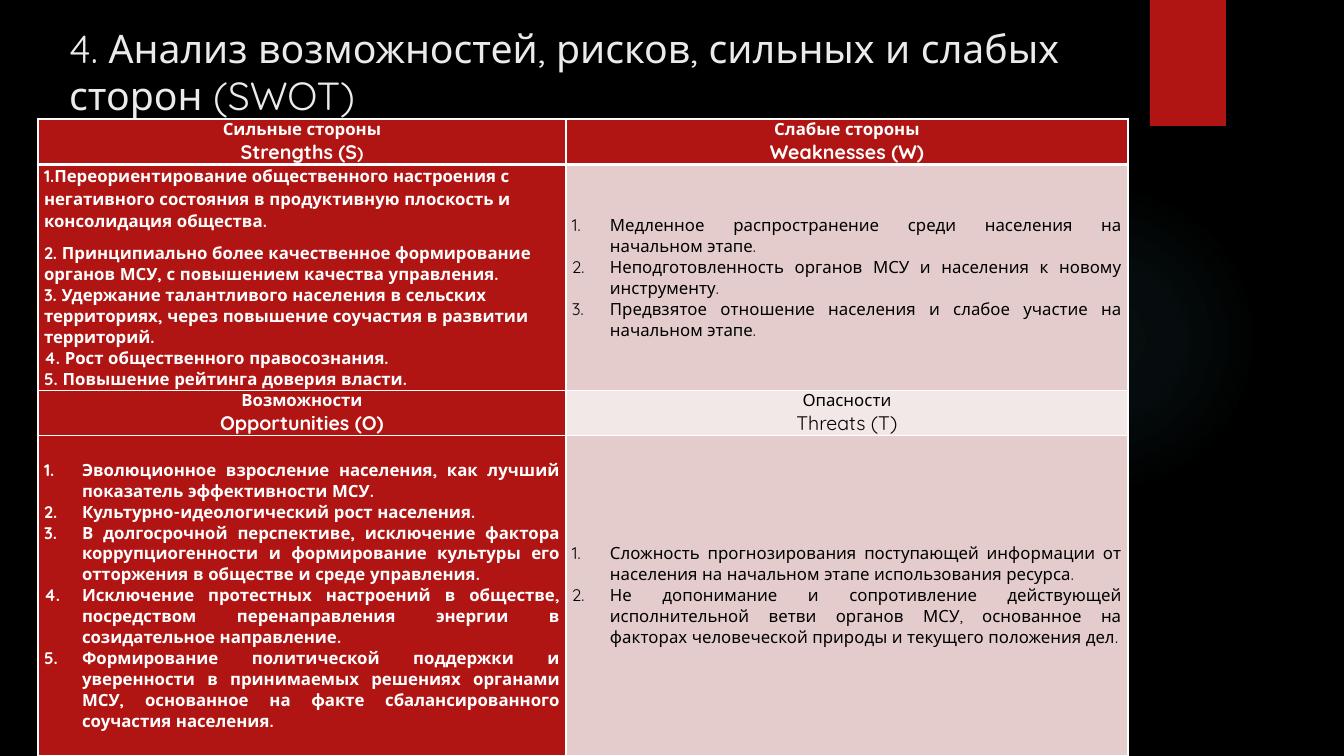
from lxml.etree import SubElement
from pptx import Presentation
from pptx.dml.color import RGBColor
from pptx.enum.shapes import MSO_SHAPE as Shape
from pptx.enum.text import MSO_ANCHOR as Anchor, MSO_AUTO_SIZE as AutoSize, PP_ALIGN as Align
from pptx.oxml import parse_xml
from pptx.oxml.ns import nsdecls, qn
from pptx.util import Emu, Pt

FONT = "Quicksand"
RED, PINK, PALE, WHITE, BLACK = "B01513", "E4CCCC", "F2E8E7", "FFFFFF", "000000"
TITLE = "4. Анализ возможностей, рисков, сильных и слабых сторон (SWOT)"
COLUMNS = [528, 562]
ROWS = [34, 205, 34, 320]

HEADINGS = {
    (0, 0): ("Сильные стороны", [("Strengths (S", 14), (")", 12)]),
    (0, 1): ("Слабые стороны", [("Weaknesses (W)", 14)]),
    (2, 0): ("Возможности", [("Opportunities (O)", 14)]),
    (2, 1): ("Опасности", [("Threats (T)", 14)]),
}
STRENGTHS = [
    "1.Переориентирование общественного настроения с негативного состояния в продуктивную плоскость и консолидация общества.",
    "2. Принципиально более качественное формирование органов МСУ, с повышением качества управления.",
    "3. Удержание талантливого населения в сельских территориях, через повышение соучастия в развитии территорий.",
    "4. Рост общественного правосознания.",
    "5. Повышение рейтинга доверия власти.",
]
NUMBERED = {
    (1, 1): [
        "Медленное распространение среди населения на начальном этапе.",
        "Неподготовленность органов МСУ и населения к новому инструменту.",
        "Предвзятое отношение населения и слабое участие на начальном этапе.",
    ],
    (3, 0): [
        "Эволюционное взросление населения, как лучший показатель эффективности МСУ.",
        "Культурно-идеологический рост населения.",
        "В долгосрочной перспективе, исключение фактора коррупциогенности и формирование культуры его отторжения в обществе и среде управления.",
        "Исключение протестных настроений в обществе, посредством перенаправления энергии в созидательное направление.",
        "Формирование политической поддержки и уверенности в принимаемых решениях органами МСУ, основанное на факте сбалансированного соучастия населения.",
    ],
    (3, 1): [
        "Сложность прогнозирования поступающей информации от населения на начальном этапе использования ресурса.",
        "Не допонимание и сопротивление действующей исполнительной ветви органов МСУ, основанное на факторах человеческой природы и текущего положения дел.",
    ],
}


def px(length):
    return Emu(round(length * 914400 / 100.8))


def color(value):
    return RGBColor.from_string(value)


def add_run(paragraph, text, size, ink, bold=False):
    run = paragraph.add_run()
    run.text = text
    run.font.name = FONT
    run.font.size = Pt(size)
    run.font.bold = bold
    run.font.color.rgb = color(ink)


def add_paragraph(frame, index, align):
    paragraph = frame.add_paragraph() if index else frame.paragraphs[0]
    paragraph.alignment = align
    return paragraph


def add_decoration(slide, kind, *box):
    shape = slide.shapes.add_shape(kind, *map(px, box))
    shape.shadow.inherit = False
    shape.line.fill.background()
    return shape


def add_glow(slide):
    glow = add_decoration(slide, Shape.OVAL, 949, 184, 310, 310)
    glow.fill.background()
    stops = "".join(
        f'<a:gs pos="{place * 1000}"><a:srgbClr val="50B9C1"><a:alpha val="{alpha * 1000}"/></a:srgbClr></a:gs>'
        for place, alpha in [(0, 7), (36, 6), (69, 0)]
    )
    gradient = parse_xml(
        f'<a:gradFill {nsdecls("a")} rotWithShape="1"><a:gsLst>{stops}</a:gsLst><a:path path="circle">'
        '<a:fillToRect l="50000" t="50000" r="50000" b="50000"/></a:path></a:gradFill>'
    )
    properties = glow.element.spPr
    properties.replace(properties.find(qn("a:noFill")), gradient)


def set_borders(cell, row):
    thick = {0: "B", 1: "T"}.get(row)
    for side in "LRTB":
        width = Pt(3 if side == thick else 1)
        line = SubElement(cell._tc.get_or_add_tcPr(), qn(f"a:ln{side}"), w=str(width))
        SubElement(SubElement(line, qn("a:solidFill")), qn("a:srgbClr"), val=WHITE)


def number(paragraph):
    properties = paragraph._p.get_or_add_pPr()
    properties.set("marL", str(px(38)))
    properties.set("indent", str(px(-38)))
    SubElement(properties, qn("a:buFont"), typeface="+mj-lt")
    SubElement(properties, qn("a:buAutoNum"), type="arabicPeriod")


def fill_cell(cell, row, column):
    red = row == 0 or column == 0
    heading = (row, column) in HEADINGS
    ink = WHITE if red else BLACK
    cell.margin_left = cell.margin_right = px(6)
    cell.margin_top = cell.margin_bottom = 0
    cell.vertical_anchor = Anchor.TOP if heading else Anchor.MIDDLE
    set_borders(cell, row)
    cell.fill.solid()
    cell.fill.fore_color.rgb = color(RED if red else PALE if heading else PINK)
    frame = cell.text_frame
    if heading:
        russian, english = HEADINGS[row, column]
        for index, runs in enumerate([[(russian, 12)], english]):
            paragraph = add_paragraph(frame, index, Align.CENTER)
            for text, size in runs:
                add_run(paragraph, text, size, ink, red)
        return
    numbered = (row, column) in NUMBERED
    for index, text in enumerate(NUMBERED.get((row, column), STRENGTHS)):
        paragraph = add_paragraph(frame, index, Align.JUSTIFY if numbered else Align.LEFT)
        if numbered:
            number(paragraph)
        elif index == 0:
            paragraph.line_spacing = 1.07
            paragraph.space_after = Pt(8)
        add_run(paragraph, text, 12, ink, red)


def add_swot_table(slide):
    table = slide.shapes.add_table(
        len(ROWS), len(COLUMNS), px(38), px(119), px(sum(COLUMNS)), px(sum(ROWS))
    ).table
    for column, width in enumerate(COLUMNS):
        table.columns[column].width = px(width)
    for row, height in enumerate(ROWS):
        table.rows[row].height = px(height)
        for column in range(len(COLUMNS)):
            fill_cell(table.cell(row, column), row, column)


def add_title(slide):
    title = slide.shapes.title
    title.left, title.top, title.width, title.height = map(px, (59, 19, 1037, 72))
    frame = title.text_frame
    frame.word_wrap = True
    frame.auto_size = AutoSize.NONE
    frame.vertical_anchor = Anchor.TOP
    add_run(add_paragraph(frame, 0, Align.LEFT), TITLE, 28, "EBEBEB")


def main():
    presentation = Presentation()
    presentation.slide_width, presentation.slide_height = px(1344), px(756)
    slide = presentation.slides.add_slide(presentation.slide_layouts[5])
    slide.background.fill.solid()
    slide.background.fill.fore_color.rgb = color(BLACK)
    add_title(slide)
    add_glow(slide)
    ribbon = add_decoration(slide, Shape.RECTANGLE, 1150, 0, 76, 126)
    ribbon.fill.solid()
    ribbon.fill.fore_color.rgb = color(RED)
    add_swot_table(slide)
    presentation.save("out.pptx")


if __name__ == "__main__":
    main()
